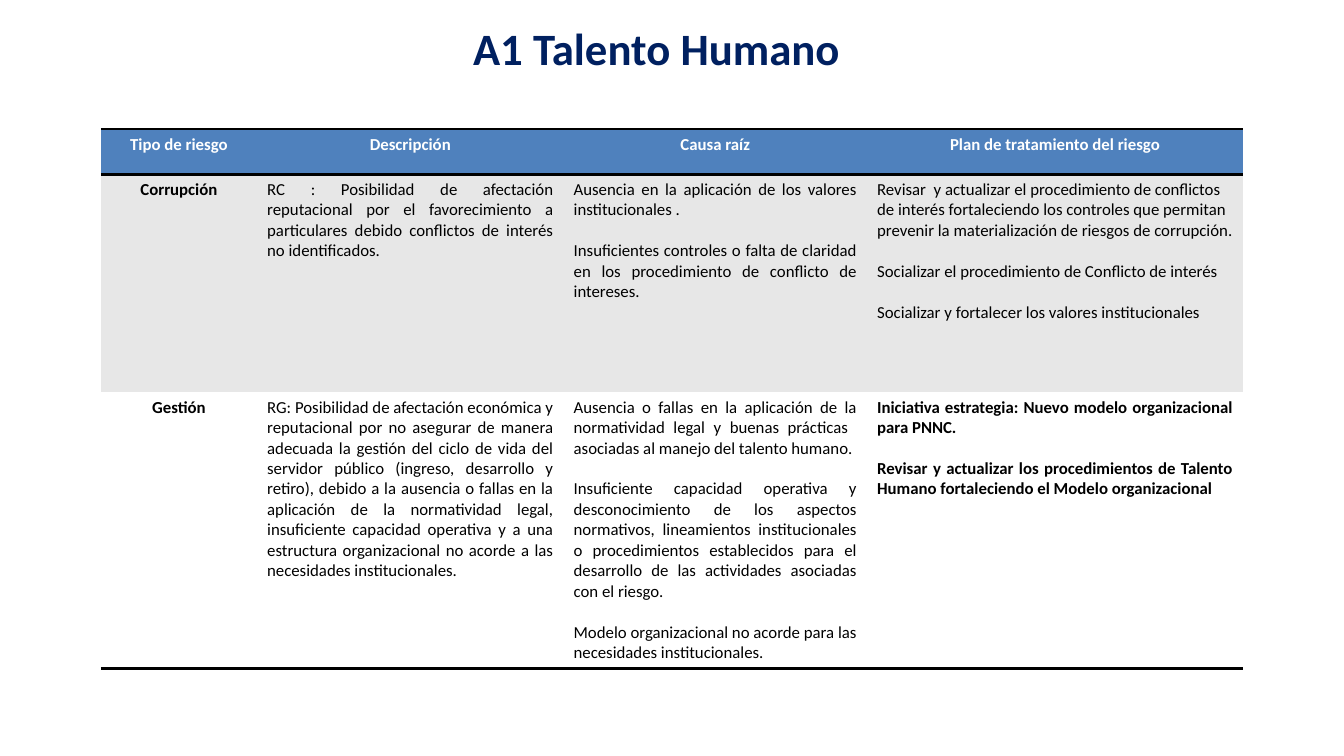
from dataclasses import dataclass

from lxml import etree
from pptx import Presentation
from pptx import util as u
from pptx.dml.color import RGBColor
from pptx.enum import text
from pptx.oxml.ns import qn

CENTER, JUSTIFY, LEFT = text.PP_ALIGN.CENTER, text.PP_ALIGN.JUSTIFY, text.PP_ALIGN.LEFT


@dataclass(frozen=True)
class Theme:
    font: str = "Calibri"
    title_size: int = 32
    body_size: int = 12
    paragraph_gap: float = 14.6
    rule_width: int = 2
    navy: str = "002060"
    blue: str = "4F81BD"
    gray: str = "E7E7E7"
    white: str = "FFFFFF"
    black: str = "000000"


THEME = Theme()
SLIDE_SIZE = (13.33, 7.5)
TABLE_ORIGIN = (1, 1.28)
COLUMNS = (1.55, 3.04, 3.01, 3.73)
ROWS = (0.45, 2.16, 2.74)
ROW_FILLS = (THEME.blue, THEME.gray, THEME.white)
RULED_EDGES = (0, 1, 3)  # horizontal edges of the table, counted from the top

# Each row lists its cells, and each cell its paragraphs
RISKS = [
    [["Tipo de riesgo"], ["Descripción"], ["Causa raíz"], ["Plan de tratamiento del riesgo"]],
    [
        ["Corrupción"],
        ["RC : Posibilidad de afectación reputacional por el favorecimiento a particulares "
         "debido conflictos de interés no identificados."],
        ["Ausencia en la aplicación de los valores institucionales .",
         "Insuficientes controles o falta de claridad en los procedimiento de conflicto de "
         "intereses."],
        ["Revisar  y actualizar el procedimiento de conflictos de interés fortaleciendo los "
         "controles que permitan prevenir la materialización de riesgos de corrupción.",
         "Socializar el procedimiento de Conflicto de interés",
         "Socializar y fortalecer los valores institucionales"],
    ],
    [
        ["Gestión"],
        ["RG: Posibilidad de afectación económica y reputacional por no asegurar de manera "
         "adecuada la gestión del ciclo de vida del servidor público (ingreso, desarrollo y "
         "retiro), debido a la ausencia o fallas en la aplicación de la normatividad legal, "
         "insuficiente capacidad operativa y a una estructura organizacional no acorde a las "
         "necesidades institucionales."],
        ["Ausencia o fallas en la aplicación de la normatividad legal y buenas prácticas  "
         "asociadas al manejo del talento humano.",
         "Insuficiente capacidad operativa y desconocimiento de los aspectos normativos, "
         "lineamientos institucionales o procedimientos establecidos para el desarrollo de "
         "las actividades asociadas con el riesgo.",
         "Modelo organizacional no acorde para las necesidades institucionales."],
        ["Iniciativa estrategia: Nuevo modelo organizacional para PNNC.",
         "Revisar y actualizar los procedimientos de Talento Humano fortaleciendo el Modelo "
         "organizacional"],
    ],
]


def format_paragraph(para, size, color, bold, align):
    para.alignment = align
    for span in para.runs:
        span.font.name = THEME.font
        span.font.size = u.Pt(size)
        span.font.bold = bold
        span.font.color.rgb = RGBColor.from_string(color)


def add_title(page, wording):
    box = page.shapes.title
    width, height = SLIDE_SIZE
    box.left, box.top = u.Inches(width * 0.134), u.Inches(height * 0.027)
    box.width, box.height = u.Inches(width * 0.709), u.Inches(height * 0.072)
    frame = box.text_frame
    frame.margin_left = frame.margin_right = frame.margin_top = frame.margin_bottom = 0
    frame.text = wording
    format_paragraph(frame.paragraphs[0], THEME.title_size, THEME.navy, True, CENTER)


def set_borders(cell, row):
    """Rule the chosen horizontal edges and clear every other side."""
    ruled = {"lnL": False, "lnR": False,
             "lnT": row in RULED_EDGES, "lnB": row + 1 in RULED_EDGES}
    properties = cell._tc.get_or_add_tcPr()
    for position, (side, has_rule) in enumerate(ruled.items()):
        line = etree.Element(qn(f"a:{side}"))
        if has_rule:
            line.set("w", str(u.Pt(THEME.rule_width)))
            fill = etree.SubElement(line, qn("a:solidFill"))
            etree.SubElement(fill, qn("a:srgbClr"), val=THEME.black)
        else:
            etree.SubElement(line, qn("a:noFill"))
        properties.insert(position, line)


def fill_cell(cell, row, column, paragraphs):
    cell.fill.solid()
    cell.fill.fore_color.rgb = RGBColor.from_string(ROW_FILLS[row])
    set_borders(cell, row)

    is_heading = row == 0 or column == 0
    is_bold = is_heading or (row, column) == (2, 3)
    color = THEME.white if row == 0 else THEME.black
    cell.text_frame.text = "\n".join(paragraphs)
    for index, para in enumerate(cell.text_frame.paragraphs):
        align = CENTER if is_heading else JUSTIFY
        if (row, column, index) == (1, 3, 0):
            align = LEFT
        format_paragraph(para, THEME.body_size, color, is_bold, align)
        if index:
            para.space_before = u.Pt(THEME.paragraph_gap)


def add_risk_table(page):
    left, top, width, height = map(u.Inches, (*TABLE_ORIGIN, sum(COLUMNS), sum(ROWS)))
    table = page.shapes.add_table(len(ROWS), len(COLUMNS), left, top, width, height).table
    table.horz_banding = False
    for column, size in zip(table.columns, COLUMNS):
        column.width = u.Inches(size)
    for row, size in zip(table.rows, ROWS):
        row.height = u.Inches(size)
    for row, cells in enumerate(RISKS):
        for column, paragraphs in enumerate(cells):
            fill_cell(table.cell(row, column), row, column, paragraphs)


def main():
    deck = Presentation()
    deck.slide_width, deck.slide_height = map(u.Inches, SLIDE_SIZE)
    page = deck.slides.add_slide(deck.slide_layouts.get_by_name("Title Only"))
    add_title(page, "A1 Talento Humano")
    add_risk_table(page)
    deck.save("out.pptx")


if __name__ == "__main__":
    main()
